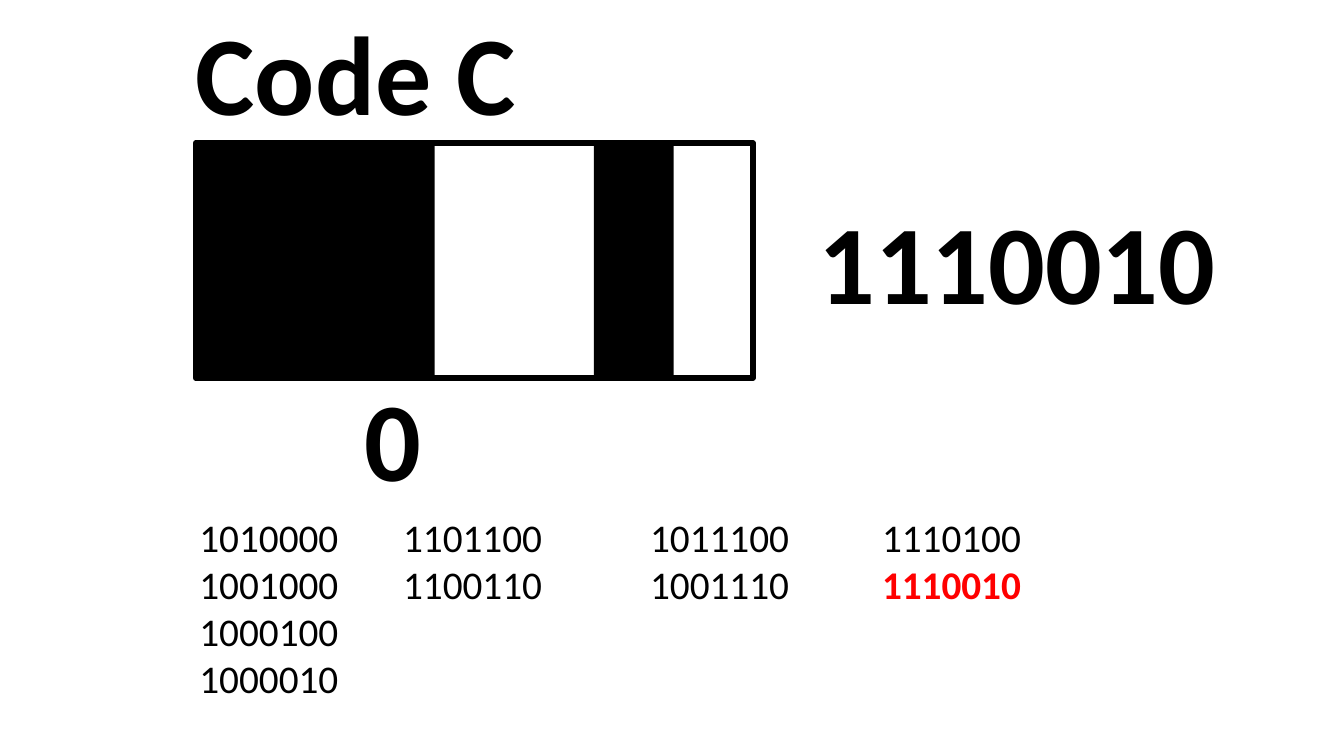
import pptx
import pptx.util
import pptx.dml.color
import pptx.enum.shapes
import pptx.enum.text

Inches = pptx.util.Inches
Pt = pptx.util.Pt
BLACK = pptx.dml.color.RGBColor(0, 0, 0)
RED = pptx.dml.color.RGBColor(255, 0, 0)
CODE = "1110010"
LEFT, TOP, STEP, HIGH = 1.94, 1.42, 0.79, 2.33


class Page:
    face = "Calibri"
    big = 80
    small = 28

    def __init__(self, deck):
        self.slide = deck.slides.add_slide(deck.slide_layouts[5])

    def fill_text(self, shape, lines, size, bold, mark=None):
        frame = shape.text_frame
        frame.text = "\n".join(lines)
        frame.word_wrap = True
        frame.auto_size = pptx.enum.text.MSO_AUTO_SIZE.NONE
        frame.vertical_anchor = pptx.enum.text.MSO_ANCHOR.TOP
        for para in frame.paragraphs:
            hit = para.text == mark
            para.alignment = pptx.enum.text.PP_ALIGN.LEFT
            para.font.name = self.face
            para.font.size = Pt(size)
            para.font.bold = bold or hit
            para.font.color.rgb = RED if hit else BLACK

    def title(self, text, x, y, w, h):
        shape = self.slide.shapes.title
        shape.left, shape.top = Inches(x), Inches(y)
        shape.width, shape.height = Inches(w), Inches(h)
        self.fill_text(shape, [text], self.big, True)

    def text(self, lines, x, y, w, h, size, bold=False, mark=None):
        shape = self.slide.shapes.add_textbox(
            Inches(x), Inches(y), Inches(w), Inches(h))
        self.fill_text(shape, lines, size, bold, mark)

    def rect(self, x, y, w, h):
        shape = self.slide.shapes.add_shape(
            pptx.enum.shapes.MSO_SHAPE.RECTANGLE,
            Inches(x), Inches(y), Inches(w), Inches(h))
        shape.shadow.inherit = False
        return shape

    def bar(self, x, y, w, h):
        shape = self.rect(x, y, w, h)
        shape.fill.solid()
        shape.fill.fore_color.rgb = BLACK
        shape.line.fill.background()

    def frame(self, x, y, w, h):
        shape = self.rect(x, y, w, h)
        shape.fill.background()
        shape.line.color.rgb = BLACK
        shape.line.width = Pt(4)


def main():
    deck = pptx.Presentation()
    deck.slide_width = Inches(13.33)
    deck.slide_height = Inches(7.5)
    page = Page(deck)
    page.title("Code C", 1.84, -0.02, 5.62, 1.45)

    for i, bit in enumerate(CODE):
        if bit == "1":
            page.bar(LEFT + i * STEP, TOP, STEP, HIGH)
    page.frame(LEFT, TOP, len(CODE) * STEP, HIGH)

    page.text(["0"], 3.52, 3.62, 1, 1.45, page.big, True)
    page.text([CODE], 8.02, 1.86, 4.3, 1.45, page.big, True)

    lists = [
        (1.88, ["1010000", "1001000", "1000100", "1000010"]),
        (3.9, ["1101100", "1100110"]),
        (6.35, ["1011100", "1001110"]),
        (8.65, ["1110100", CODE]),
    ]
    for x, codes in lists:
        high = 0.1 + 0.47 * len(codes)
        page.text(codes, x, 5.04, 2.27, high, page.small, mark=CODE)

    deck.save("out.pptx")


if __name__ == "__main__":
    main()
